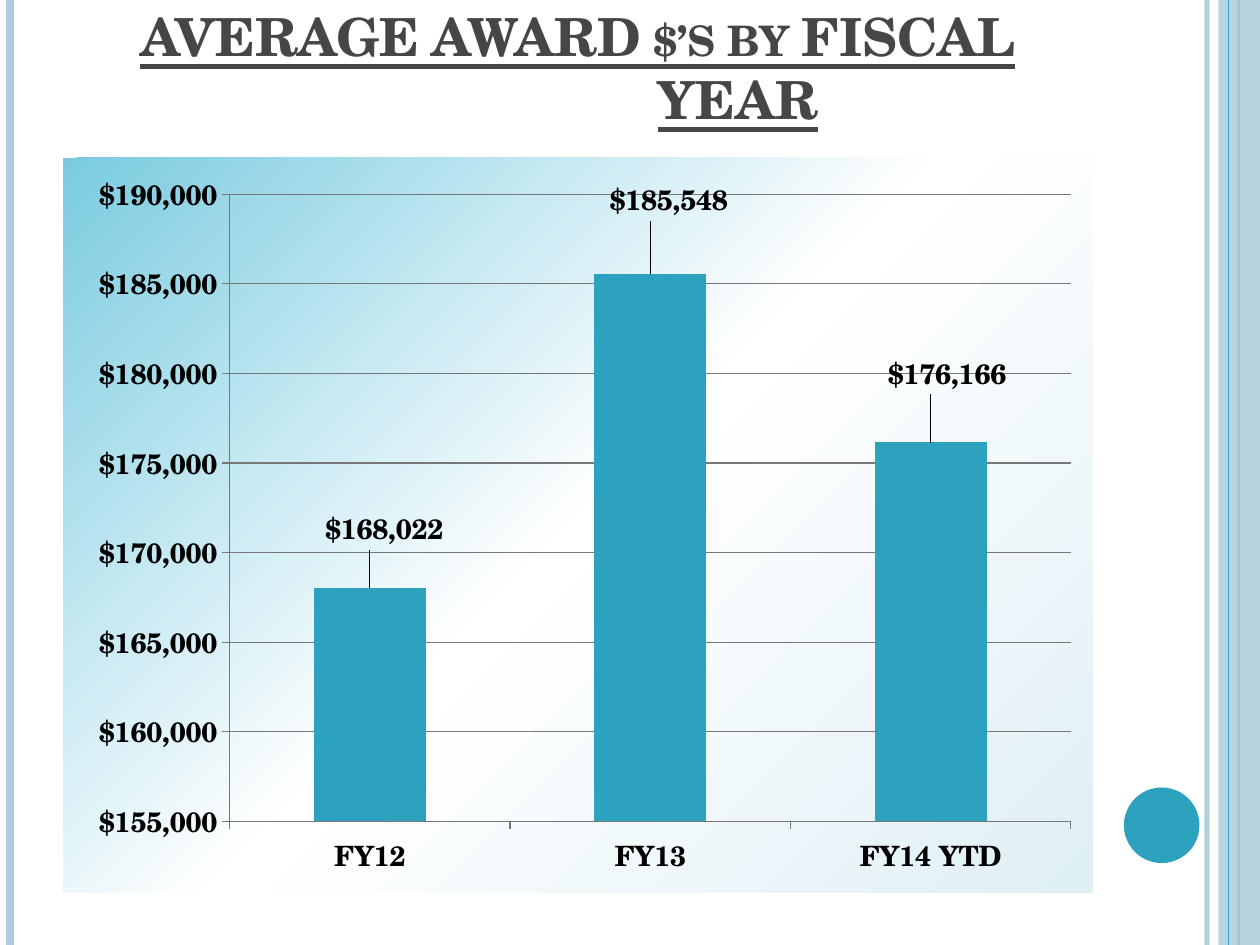
from lxml import etree
from pptx import Presentation
from pptx.chart.data import CategoryChartData
from pptx.dml.color import RGBColor
from pptx.enum.chart import XL_CHART_TYPE as ChartType
from pptx.enum.chart import XL_LABEL_POSITION as LabelPosition
from pptx.enum.chart import XL_TICK_MARK as TickMark
from pptx.enum.shapes import MSO_CONNECTOR as Connector
from pptx.enum.shapes import MSO_SHAPE as Shape
from pptx.enum.text import MSO_ANCHOR as Anchor
from pptx.enum.text import PP_ALIGN as Align
from pptx.oxml import parse_xml
from pptx.oxml.ns import nsdecls, qn
from pptx.util import Inches, Pt

FONT = "TeX Gyre Schola"
COLORS = {"pale": "ADCEDC", "teal": "2DA2BF", "title": "464646", "text": "000000",
          "grid": "777777", "sky": "7ACBE0", "white": "FFFFFF", "mist": "DFEFF6"}
AWARDS = {"FY12": 168022, "FY13": 185548, "FY14 YTD": 176166}
LABEL_SHIFTS = [(0.014, -0.045), (0.018, -0.065), (0.016, -0.058)]
RULES = [(9.58, "pale", 3, 93), (0.08, "pale", 4.5, 100), (9.83, "teal", 1.5, 100)]


def color(name):
    return RGBColor.from_string(COLORS[name])


def set_format(target, values):
    for name, value in values.items():
        setattr(target, name, value)


def set_opacity(element, percent):
    fill = element.find(".//" + qn("a:srgbClr"))
    etree.SubElement(fill, qn("a:alpha"), val=str(percent * 1000))


def add_rule(page, x, name, width, opacity=100):
    rule = page.shapes.add_connector(
        Connector.STRAIGHT, Inches(x), Inches(0), Inches(x), Inches(7.5))
    rule.line.color.rgb = color(name)
    rule.line.width = Pt(width)
    properties = rule._element.spPr
    if opacity < 100:
        set_opacity(properties, opacity)
    etree.SubElement(properties, qn("a:effectLst"))


def add_plain_shape(page, kind, bounds, name, opacity=100):
    shape = page.shapes.add_shape(kind, *map(Inches, bounds))
    shape.shadow.inherit = False
    shape.fill.solid()
    shape.fill.fore_color.rgb = color(name)
    shape.line.fill.background()
    if opacity < 100:
        set_opacity(shape._element.spPr, opacity)


def add_title(page, text):
    box = page.shapes.add_textbox(*map(Inches, (0.5, 0.3, 8.17, 0.78)))
    set_format(box.text_frame, {"word_wrap": True, "vertical_anchor": Anchor.BOTTOM})
    para = box.text_frame.paragraphs[0]
    para.alignment = Align.CENTER
    # Hanging indent moves the second line to the right
    indent = Inches(1.27)
    set_format_xml = para._p.get_or_add_pPr().set
    set_format_xml("marL", str(indent))
    set_format_xml("indent", str(-indent))
    span = para.add_run()
    span.text = text
    set_format(span.font, {"name": FONT, "size": Pt(30), "bold": True, "underline": True})
    span.font.color.rgb = color("title")
    span._r.get_or_add_rPr().set("cap", "small")


def style_font(font):
    set_format(font, {"name": FONT, "size": Pt(16), "bold": True})
    font.color.rgb = color("text")


def style_axis(axis):
    set_format(axis, {"major_tick_mark": TickMark.OUTSIDE, "minor_tick_mark": TickMark.NONE})
    style_font(axis.tick_labels.font)
    style_line(axis.format.line)


def style_line(line):
    line.color.rgb = color("grid")
    line.width = Pt(0.75)


def manual_layout(**values):
    items = "".join(f'<c:{name} val="{value}"/>' for name, value in values.items())
    return parse_xml(f'<c:layout {nsdecls("c")}><c:manualLayout>{items}'
                     '</c:manualLayout></c:layout>')


def fill_chart(chart):
    stops = "".join(
        f'<a:gs pos="{place * 1000}"><a:srgbClr val="{COLORS[name]}"/></a:gs>'
        for place, name in ((0, "sky"), (50, "white"), (100, "mist")))
    chart._chartSpace.find(qn("c:chart")).addnext(parse_xml(
        f'<c:spPr {nsdecls("c", "a")}><a:gradFill><a:gsLst>{stops}</a:gsLst>'
        '<a:lin ang="2700000" scaled="0"/></a:gradFill>'
        '<a:ln><a:noFill/></a:ln></c:spPr>'))


def add_award_chart(page):
    data = CategoryChartData(number_format='"$"#,##0')
    data.categories = list(AWARDS)
    data.add_series("Series 1", list(AWARDS.values()))
    frame = page.shapes.add_chart(
        ChartType.COLUMN_CLUSTERED, *map(Inches, (0.5, 1.25, 8.17, 5.83)), data)
    chart = frame.chart
    set_format(chart, {"has_legend": False, "has_title": False})
    set_format(chart.font, {"name": FONT, "size": Pt(10)})
    fill_chart(chart)

    # Plot area and axes
    area = chart._chartSpace.find(".//" + qn("c:plotArea"))
    for old in area.findall(qn("c:layout")):
        area.remove(old)
    area.insert(0, manual_layout(layoutTarget="inner", xMode="edge", yMode="edge",
                                 x=0.162, y=0.05, w=0.817, h=0.854))
    for axis in (chart.category_axis, chart.value_axis):
        style_axis(axis)
    set_format(chart.value_axis, {"minimum_scale": 155000, "maximum_scale": 190000,
                                  "major_unit": 5000, "has_major_gridlines": True})
    style_line(chart.value_axis.major_gridlines.format.line)

    # Columns and their raised labels
    plot = chart.plots[0]
    set_format(plot, {"gap_width": 150, "vary_by_categories": False})
    series = plot.series[0]
    series.format.fill.solid()
    series.format.fill.fore_color.rgb = color("teal")
    series.data_labels.show_value = True
    for index, (x, y) in enumerate(LABEL_SHIFTS):
        label = series.points[index].data_label
        style_font(label.font)
        label.position = LabelPosition.OUTSIDE_END
        mark = series._element.findall(".//" + qn("c:dLbl"))[index]
        mark.find(qn("c:idx")).addnext(manual_layout(x=x, y=y))


def main():
    deck = Presentation()
    set_format(deck, {"slide_width": Inches(10), "slide_height": Inches(7.5)})
    page = deck.slides.add_slide(deck.slide_layouts[6])

    # Side bands and circle
    for rule in RULES:
        add_rule(page, *rule)
    add_plain_shape(page, Shape.RECTANGLE, (9.67, 0, 0.33, 7.5), "pale", 87)
    add_rule(page, 9.75, "teal", 0.75)
    add_plain_shape(page, Shape.OVAL, (8.92, 6.25, 0.6, 0.6), "teal")

    # Content
    add_title(page, "AVERAGE AWARD $’s by FISCAL YEAR")
    add_award_chart(page)
    deck.save("out.pptx")


if __name__ == "__main__":
    main()
